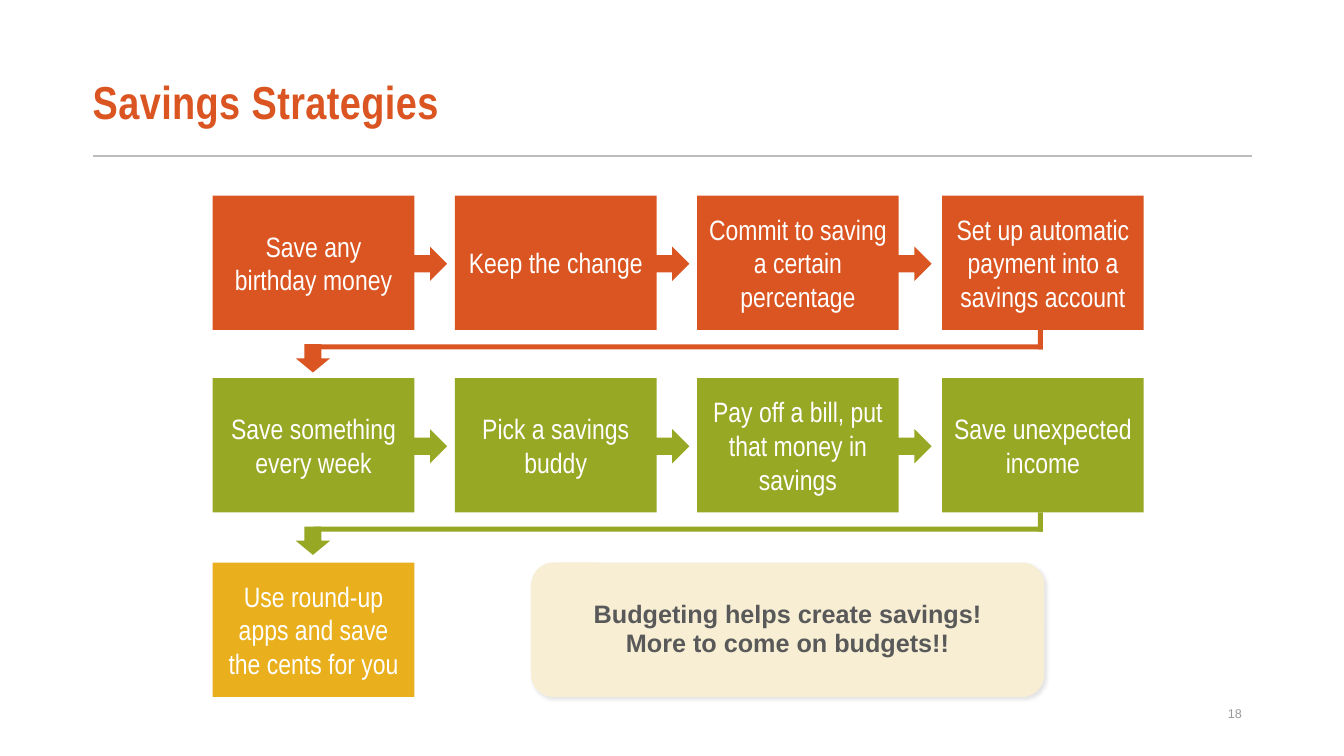
from lxml.etree import SubElement
from pptx import Presentation
from pptx.dml.color import RGBColor
from pptx.enum.shapes import MSO_CONNECTOR as CONN, MSO_SHAPE as SHAPE
from pptx.enum.text import MSO_ANCHOR as ANCHOR, MSO_AUTO_SIZE as AUTO, PP_ALIGN as ALIGN
from pptx.oxml import parse_xml
from pptx.oxml.ns import nsdecls, qn
from pptx.util import Pt

ORANGE = RGBColor(0xDA, 0x55, 0x21)
GREEN = RGBColor(0x97, 0xA8, 0x25)
YELLOW = RGBColor(0xE9, 0xAF, 0x1D)
CREAM = RGBColor(0xF7, 0xEE, 0xD4)
WHITE = RGBColor(0xFF, 0xFF, 0xFF)
DARK_GREY = RGBColor(0x59, 0x59, 0x59)
PAGE_GREY = RGBColor(0x9A, 0x9A, 0x9A)
RULE_GREY = RGBColor(0xBD, 0xBD, 0xBD)

BOX_W, BOX_H = 144, 96
LEFTS = (152, 325, 498, 673)
BAR = 3.6
ROWS = (
    (139.7, ORANGE, (
        "Save any birthday money",
        "Keep the change",
        "Commit to saving a certain percentage",
        "Set up automatic payment into a savings account",
    )),
    (270, GREEN, (
        "Save something every week",
        "Pick a savings buddy",
        "Pay off a bill, put that money in savings",
        "Save unexpected income",
    )),
    (401.8, YELLOW, ("Use round-up apps and save the cents for you",)),
)


def style_font(font, name, size, color, bold=False):
    font.name = name
    font.size = Pt(size)
    font.color.rgb = color
    font.bold = bold


def add_shape(s, kind, left, top, width, height, color):
    sp = s.shapes.add_shape(kind, Pt(left), Pt(top), Pt(width), Pt(height))
    sp.shadow.inherit = False
    sp.fill.solid()
    sp.fill.fore_color.rgb = color
    sp.line.fill.background()
    return sp


def set_text(sp, text, name, size, color, bold=False):
    tf = sp.text_frame
    tf.word_wrap = True
    tf.vertical_anchor = ANCHOR.MIDDLE
    tf.text = text
    p = tf.paragraphs[0]
    p.alignment = ALIGN.CENTER
    style_font(p.runs[0].font, name, size, color, bold)
    return p


def add_title(s, text):
    sp = s.shapes.title
    sp.left, sp.top, sp.width, sp.height = Pt(66.2), Pt(54), Pt(828), Pt(58.3)
    tf = sp.text_frame
    tf.auto_size = AUTO.NONE
    tf.vertical_anchor = ANCHOR.TOP
    tf.margin_left = 0
    tf.text = text
    p = tf.paragraphs[0]
    p.alignment = ALIGN.LEFT
    p.line_spacing = 0.87
    r = p.runs[0]
    style_font(r.font, "Arial Narrow", 33, ORANGE, True)
    r.font._element.set("spc", "30")


def add_rule(s):
    line = s.shapes.add_connector(CONN.STRAIGHT, Pt(66.2), Pt(111.2), Pt(894.2), Pt(111.2))
    line.line.color.rgb = RULE_GREY
    line.line.width = Pt(1.5)
    SubElement(line._element.spPr, qn("a:effectLst"))


def add_row(s, top, color, labels):
    for left, label in zip(LEFTS, labels):
        sp = add_shape(s, SHAPE.RECTANGLE, left, top, BOX_W, BOX_H, color)
        set_text(sp, label, "Arial Narrow", 20, WHITE)
    for left in LEFTS[:len(labels) - 1]:
        add_shape(s, SHAPE.RIGHT_ARROW, left + 140, top + 36.5, 27.4, 24.5, color)


def add_return_path(s, top, color):
    start, end = LEFTS[0] + BOX_W / 2, LEFTS[-1] + BOX_W / 2
    bar_top = top + 106.2
    add_shape(s, SHAPE.RECTANGLE, end - BAR, top + BOX_H, BAR, 13.8, color)
    arrow = add_shape(s, SHAPE.RIGHT_ARROW, start - 10.6, top + 104, 20.2, 24.5, color)
    arrow.rotation = 90
    add_shape(s, SHAPE.RECTANGLE, start, bar_top, end - start, BAR, color)


def add_callout(s, text):
    sp = add_shape(s, SHAPE.ROUNDED_RECTANGLE, 379.4, 401.8, 366.5, BOX_H, CREAM)
    sp._element.spPr.find(qn("a:effectLst")).append(parse_xml(
        f'<a:outerShdw {nsdecls("a")} blurRad="{Pt(3)}" dist="{Pt(2)}" dir="2700000">'
        '<a:srgbClr val="000000"><a:alpha val="11000"/></a:srgbClr></a:outerShdw>'))
    sp.text_frame.margin_left = sp.text_frame.margin_right = Pt(25)
    p = set_text(sp, text, "Arial", 18, DARK_GREY, True)
    p.line_spacing = 0.95


def add_page_number(s, number):
    sp = s.shapes.add_textbox(Pt(678.2), Pt(500.4), Pt(216), Pt(28.8))
    p = sp.text_frame.paragraphs[0]
    p.alignment = ALIGN.RIGHT
    p._p.append(parse_xml(
        f'<a:fld {nsdecls("a")} id="{{B6F15528-21DE-4FAA-801E-634DDDAF4B2B}}" type="slidenum">'
        f'<a:rPr lang="en-US" sz="900"><a:solidFill><a:srgbClr val="{PAGE_GREY}"/></a:solidFill>'
        f'<a:latin typeface="Arial"/></a:rPr><a:t>{number}</a:t></a:fld>'))


def main():
    prs = Presentation()
    prs.slide_width, prs.slide_height = Pt(960), Pt(540)
    prs.element.set("firstSlideNum", "18")
    s = prs.slides.add_slide(prs.slide_layouts[5])
    add_title(s, "Savings Strategies")
    add_rule(s)
    for top, color, labels in ROWS:
        add_row(s, top, color, labels)
    for top, color, _ in ROWS[:-1]:
        add_return_path(s, top, color)
    add_callout(s, "Budgeting helps create savings! More to come on budgets!!")
    add_page_number(s, 18)
    prs.save("out.pptx")


if __name__ == "__main__":
    main()
